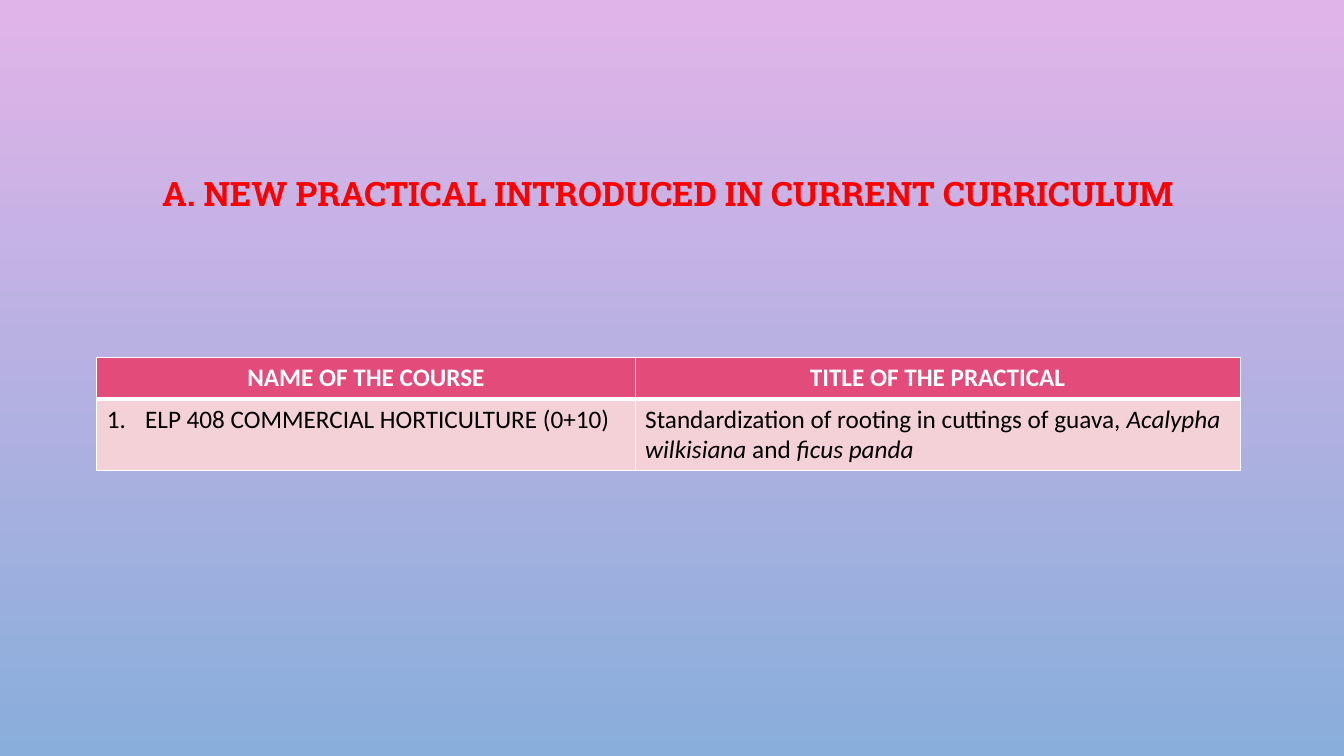
from dataclasses import dataclass

from lxml.etree import SubElement
from pptx import Presentation
from pptx.dml.color import RGBColor
from pptx.enum.text import MSO_ANCHOR, MSO_AUTO_SIZE, PP_ALIGN
from pptx.oxml.ns import qn
from pptx.util import Inches, Pt


@dataclass(frozen=True)
class Theme:
    title_font: str = "Roboto Slab"
    table_font: str = "Calibri"
    title_size: int = 24
    table_size: int = 18
    title: str = "FF0000"
    header_text: str = "FFFFFF"
    body_text: str = "000000"
    header_fill: str = "E34B7A"
    body_fill: str = "F4D0D7"
    border: str = "FFFFFF"
    gradient: tuple = ("E1B4E9", "89AEDB")


THEME = Theme()
HEADERS = ("NAME OF THE COURSE", "TITLE OF THE PRACTICAL")
COURSE = [("ELP 408 COMMERCIAL HORTICULTURE (0+10)", False)]
PRACTICAL = [
    ("Standardization of rooting in cuttings of guava, ", False),
    ("Acalypha wilkisiana", True),
    (" and ", False),
    ("ficus panda", True),
]


def set_font(paragraph, name, size, color, bold):
    font = paragraph.font
    font.name = name
    font.size = Pt(size)
    font.bold = bold
    font.color.rgb = RGBColor.from_string(color)


def set_background(slide):
    fill = slide.background.fill
    fill.gradient()
    fill.gradient_angle = 270
    for position, (stop, color) in enumerate(zip(fill.gradient_stops, THEME.gradient)):
        stop.color.rgb = RGBColor.from_string(color)
        stop.position = position


def add_title(slide, text):
    title = slide.shapes.title
    title.left, title.top = Inches(1), Inches(1.6)
    title.width, title.height = Inches(11.33), Inches(0.68)
    frame = title.text_frame
    frame.text = text
    frame.word_wrap = True
    frame.auto_size = MSO_AUTO_SIZE.NONE
    frame.vertical_anchor = MSO_ANCHOR.MIDDLE
    paragraph = frame.paragraphs[0]
    paragraph.alignment = PP_ALIGN.CENTER
    paragraph.line_spacing = 0.9
    set_font(paragraph, THEME.title_font, THEME.title_size, THEME.title, True)


def set_borders(cell, top, bottom):
    properties = cell._tc.get_or_add_tcPr()
    for side, width in (("L", 1), ("R", 1), ("T", top), ("B", bottom)):
        line = SubElement(properties, qn(f"a:ln{side}"), w=str(Pt(width)))
        fill = SubElement(line, qn("a:solidFill"))
        SubElement(fill, qn("a:srgbClr"), val=THEME.border)


def number_paragraph(paragraph):
    properties = paragraph._p.get_or_add_pPr()
    indent = Inches(0.38)
    properties.set("marL", str(indent))
    properties.set("indent", str(-indent))
    SubElement(properties, qn("a:buFont"), typeface="+mj-lt")
    SubElement(properties, qn("a:buAutoNum"), type="arabicPeriod")


def fill_cell(cell, runs, header=False, numbered=False):
    set_borders(cell, 1 if header else 3, 3 if header else 1)
    cell.fill.solid()
    color = THEME.header_fill if header else THEME.body_fill
    cell.fill.fore_color.rgb = RGBColor.from_string(color)
    paragraph = cell.text_frame.paragraphs[0]
    if numbered:
        number_paragraph(paragraph)
    paragraph.alignment = PP_ALIGN.CENTER if header else PP_ALIGN.LEFT
    text_color = THEME.header_text if header else THEME.body_text
    set_font(paragraph, THEME.table_font, THEME.table_size, text_color, header)
    for text, italic in runs:
        run = paragraph.add_run()
        run.text = text
        if italic:
            run.font.italic = True


def add_practical_table(slide):
    table = slide.shapes.add_table(
        2, 2, Inches(0.96), Inches(3.55), Inches(11.34), Inches(1.11)
    ).table
    table.horz_banding = False
    for column, width in zip(table.columns, (5.34, 6)):
        column.width = Inches(width)
    for row, height in zip(table.rows, (0.41, 0.7)):
        row.height = Inches(height)
    for column, header in enumerate(HEADERS):
        fill_cell(table.cell(0, column), [(header, False)], header=True)
    fill_cell(table.cell(1, 0), COURSE, numbered=True)
    fill_cell(table.cell(1, 1), PRACTICAL)


def main():
    presentation = Presentation()
    presentation.slide_width = Inches(13.33)
    presentation.slide_height = Inches(7.5)
    slide = presentation.slides.add_slide(presentation.slide_layouts[5])
    set_background(slide)
    add_title(slide, "A. NEW PRACTICAL INTRODUCED IN CURRENT CURRICULUM ")
    add_practical_table(slide)
    presentation.save("out.pptx")


if __name__ == "__main__":
    main()
